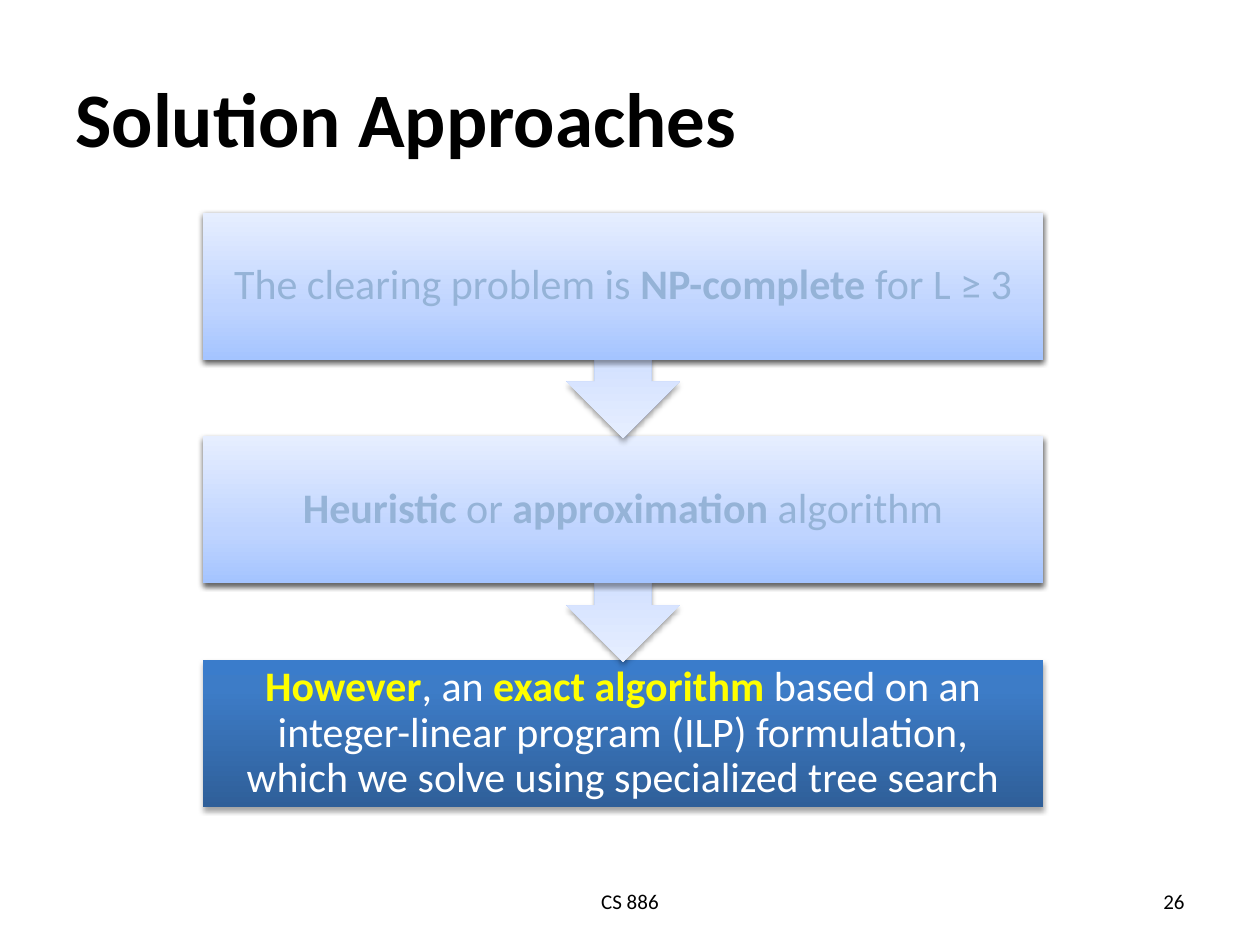
"""Build the Solution Approaches slide: three steps linked by downward arrows."""
from lxml import etree
from pptx import Presentation
from pptx.dml.color import RGBColor
from pptx.enum import shapes, text
from pptx.util import Pt

NAMESPACE = "http://schemas.openxmlformats.org/drawingml/2006/main"
PALE = [(0, "A4C4FF"), (35, "BFD4FF"), (100, "E6EEFF")]
DARK = [(0, "2F5F99"), (80, "3D7CC7"), (100, "3A7CCB")]
LEFT, TOP, WIDTH, HEIGHT, PITCH = 116, 121.5, 480, 84, 127.8
CALLOUT_HEIGHT = 128.8


def color(value):
    return RGBColor.from_string(value)


def add_panel(kind, top, height, stops, opacity, distance):
    panel = page.shapes.add_shape(kind, Pt(LEFT), Pt(top), Pt(WIDTH), Pt(height))
    panel.line.fill.background()
    properties = panel.fill._xPr
    gradient = "".join(
        f'<a:gs pos="{position * 1000}"><a:srgbClr val="{value}"/></a:gs>'
        for position, value in stops)
    fill = etree.fromstring(
        f'<a:gradFill xmlns:a="{NAMESPACE}" rotWithShape="1"><a:gsLst>{gradient}</a:gsLst>'
        '<a:lin ang="16200000" scaled="0"/></a:gradFill>')
    properties.insert(2, fill)
    properties.append(etree.fromstring(
        f'<a:effectLst xmlns:a="{NAMESPACE}"><a:outerShdw blurRad="{Pt(3.1)}" '
        f'dist="{Pt(distance)}" dir="5400000" rotWithShape="0"><a:srgbClr val="000000">'
        f'<a:alpha val="{opacity * 1000}"/></a:srgbClr></a:outerShdw></a:effectLst>'))
    return panel


deck = Presentation()
deck.slide_width, deck.slide_height = Pt(720), Pt(540)
page = deck.slides.add_slide(deck.slide_layouts[6])

labels = [
    ("Solution Approaches", 36, 21.6, 648, 90, 44, True, text.PP_ALIGN.LEFT),
    ("CS 886", 246, 500.5, 228, 28.75, 12, False, text.PP_ALIGN.CENTER),
    ("26", 516, 500.5, 168, 28.75, 12, False, text.PP_ALIGN.RIGHT),
]
for wording, left, top, width, height, size, bold, alignment in labels:
    box = page.shapes.add_textbox(Pt(left), Pt(top), Pt(width), Pt(height))
    frame = box.text_frame
    frame.word_wrap = True
    frame.vertical_anchor = text.MSO_ANCHOR.MIDDLE
    para = frame.paragraphs[0]
    para.text = wording
    para.alignment = alignment
    para.font.name, para.font.size, para.font.bold = "Calibri", Pt(size), bold
    para.font.color.rgb = color("000000")

# Each span is (wording, bold); bold spans take the accent color.
steps = [
    ([("The clearing problem is ", False), ("NP-complete", True), (" for L ≥ 3", False)],
     PALE, 38, 1.6, "95B3D7", "95B3D7"),
    ([("Heuristic", True), (" or ", False), ("approximation", True), (" algorithm", False)],
     PALE, 38, 1.6, "95B3D7", "95B3D7"),
    ([("However", True), (", an ", False), ("exact algorithm ", True),
      ("based on an integer-linear program (ILP) formulation, "
       "which we solve using specialized tree search", False)],
     DARK, 35, 1.8, "FFFFFF", "FFFF00"),
]
for index, (spans, stops, opacity, distance, plain, accent) in reversed(list(enumerate(steps))):
    top = TOP + index * PITCH
    if index < len(steps) - 1:
        callout = add_panel(shapes.MSO_SHAPE.UP_ARROW_CALLOUT, top, CALLOUT_HEIGHT,
                            stops, opacity, distance)
        callout.rotation = 180
    step = add_panel(shapes.MSO_SHAPE.RECTANGLE, top, HEIGHT, stops, opacity, distance)
    frame = step.text_frame
    frame.word_wrap = True
    frame.vertical_anchor = text.MSO_ANCHOR.MIDDLE
    frame.margin_left = frame.margin_right = Pt(13.65)
    frame.margin_top = frame.margin_bottom = Pt(13.65)
    para = frame.paragraphs[0]
    para.alignment = text.PP_ALIGN.CENTER
    para.line_spacing = 0.9
    para.space_after = Pt(8.4)
    para.font.name, para.font.size = "Calibri", Pt(24)
    for wording, bold in spans:
        span = para.add_run()
        span.text = wording
        span.font.bold = bold
        span.font.color.rgb = color(accent if bold else plain)

deck.save("out.pptx")
